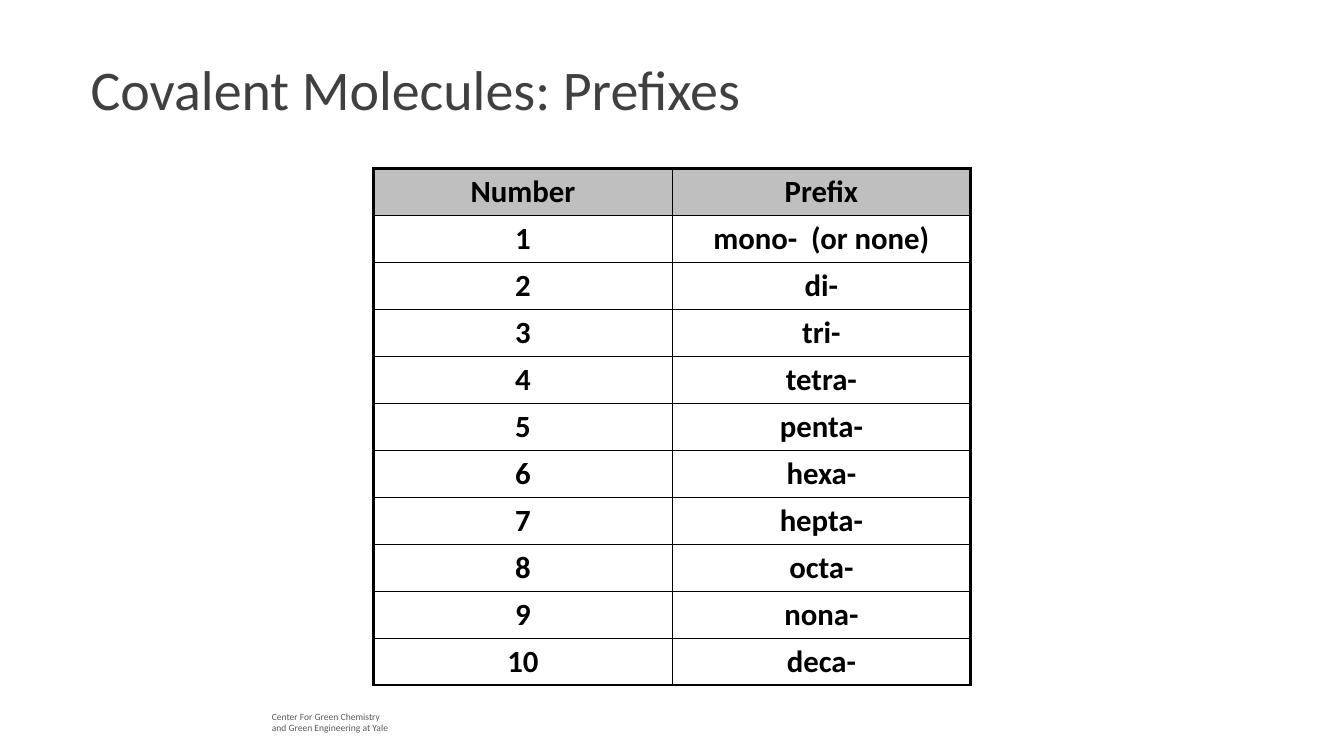
from dataclasses import dataclass

from lxml import etree
from pptx import Presentation
from pptx.dml.color import RGBColor
from pptx.enum.shapes import MSO_CONNECTOR
from pptx.enum.text import MSO_ANCHOR, PP_ALIGN
from pptx.oxml.ns import qn
from pptx.util import Cm, Pt

STRAIGHT = MSO_CONNECTOR.STRAIGHT
MIDDLE = MSO_ANCHOR.MIDDLE
LEFT, CENTER = PP_ALIGN.LEFT, PP_ALIGN.CENTER
TITLE_ONLY = 5


@dataclass(frozen=True)
class Theme:
    font: str = "Calibri"
    title_color: str = "404040"
    footer_color: str = "595959"
    table_color: str = "000000"
    header_fill: str = "BFBFBF"
    rule_colors: tuple = ("4EB3CF", "44C1A3", "37A76F")
    title_size: float = 40
    table_size: float = 22
    footer_size: float = 6.8
    inner_border: float = 1
    outer_border: float = 2.25
    rule_width: float = 0.5
    rule_opacity: int = 4


THEME = Theme()
PREFIXES = ["mono-  (or none)", "di-", "tri-", "tetra-", "penta-",
            "hexa-", "hepta-", "octa-", "nona-", "deca-"]
RULES = [(2.34, 24.82, 3.58), (2.29, 29.74, 3.76), (2.31, 31.55, 3.94)]


def format_paragraph(paragraph, size, color, bold=False, alignment=LEFT):
    paragraph.alignment = alignment
    paragraph.font.name = THEME.font
    paragraph.font.size = Pt(size)
    paragraph.font.bold = bold
    paragraph.font.color.rgb = RGBColor.from_string(color)


def set_title(slide, text):
    title = slide.shapes.title
    title.left, title.top, title.width, title.height = Cm(2.03), Cm(1.24), Cm(17.07), Cm(1.96)
    frame = title.text_frame
    frame.text = text
    frame.word_wrap = False
    frame.vertical_anchor = MIDDLE
    format_paragraph(frame.paragraphs[0], THEME.title_size, THEME.title_color)


def add_footer(slide, lines):
    frame = slide.shapes.add_textbox(Cm(6.6), Cm(17.78), Cm(4.72), Cm(0.84)).text_frame
    frame.word_wrap = True
    frame.text = "\n".join(lines)
    for paragraph in frame.paragraphs:
        format_paragraph(paragraph, THEME.footer_size, THEME.footer_color)


def add_rule(slide, start, end, top, color):
    """Add a faint horizontal line below the title."""
    rule = slide.shapes.add_connector(STRAIGHT, Cm(start), Cm(top), Cm(end), Cm(top))
    rule.line.width = Pt(THEME.rule_width)
    rule.line.color.rgb = RGBColor.from_string(color)
    properties = rule._element.spPr
    color_element = properties.find(".//" + qn("a:srgbClr"))
    etree.SubElement(color_element, qn("a:alpha"), val=str(THEME.rule_opacity * 1000))
    etree.SubElement(properties, qn("a:effectLst"))


def set_borders(cell, widths):
    """Draw cell borders; widths maps the side letters L, R, T, B to points."""
    properties = cell._tc.get_or_add_tcPr()
    for side, width in widths.items():
        line = etree.SubElement(properties, qn(f"a:ln{side}"), w=str(Pt(width)))
        fill = etree.SubElement(line, qn("a:solidFill"))
        etree.SubElement(fill, qn("a:srgbClr"), val=THEME.table_color)


def format_cell(cell, text, is_header):
    cell.text = text
    cell.vertical_anchor = MIDDLE
    cell.margin_top = cell.margin_bottom = Cm(0.1)
    format_paragraph(cell.text_frame.paragraphs[0], THEME.table_size,
                     THEME.table_color, bold=True, alignment=CENTER)
    if is_header:
        cell.fill.solid()
        cell.fill.fore_color.rgb = RGBColor.from_string(THEME.header_fill)
    else:
        cell.fill.background()


def add_prefix_table(slide, rows):
    row_count, column_count = len(rows), len(rows[0])
    table = slide.shapes.add_table(row_count, column_count, Cm(9.42), Cm(4.24),
                                   Cm(15.04), Cm(13.03)).table
    table.horz_banding = False
    for row_index, row in enumerate(rows):
        for column_index, text in enumerate(row):
            cell = table.cell(row_index, column_index)
            edges = {"L": column_index == 0, "R": column_index == column_count - 1,
                     "T": row_index == 0, "B": row_index == row_count - 1}
            set_borders(cell, {side: THEME.outer_border if outer else THEME.inner_border
                               for side, outer in edges.items()})
            format_cell(cell, text, is_header=row_index == 0)


def main():
    presentation = Presentation()
    presentation.slide_width, presentation.slide_height = Cm(33.87), Cm(19.05)
    slide = presentation.slides.add_slide(presentation.slide_layouts[TITLE_ONLY])
    add_footer(slide, ["Center For Green Chemistry", "and Green Engineering at Yale"])
    for (start, end, top), color in zip(RULES, THEME.rule_colors):
        add_rule(slide, start, end, top, color)
    set_title(slide, "Covalent Molecules: Prefixes")
    numbered = [(str(number), prefix) for number, prefix in enumerate(PREFIXES, start=1)]
    add_prefix_table(slide, [("Number", "Prefix"), *numbered])
    presentation.save("out.pptx")


if __name__ == "__main__":
    main()
